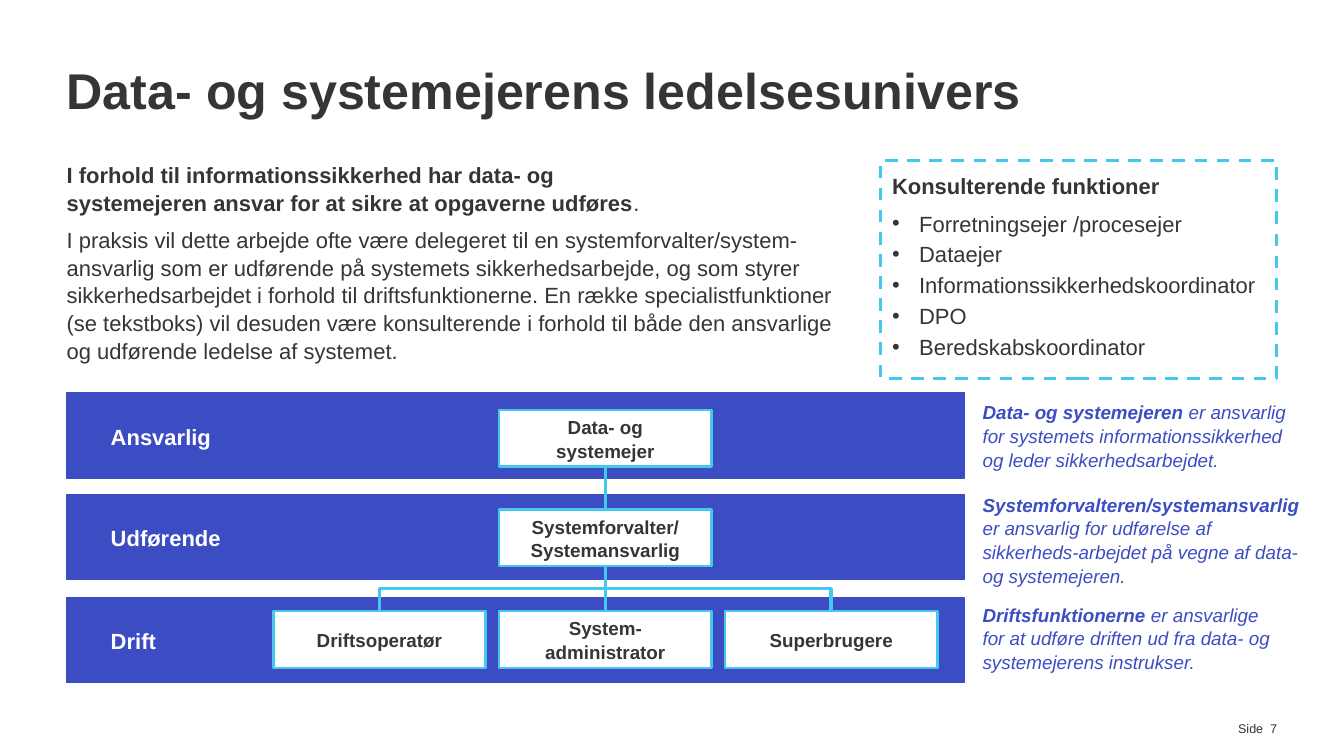
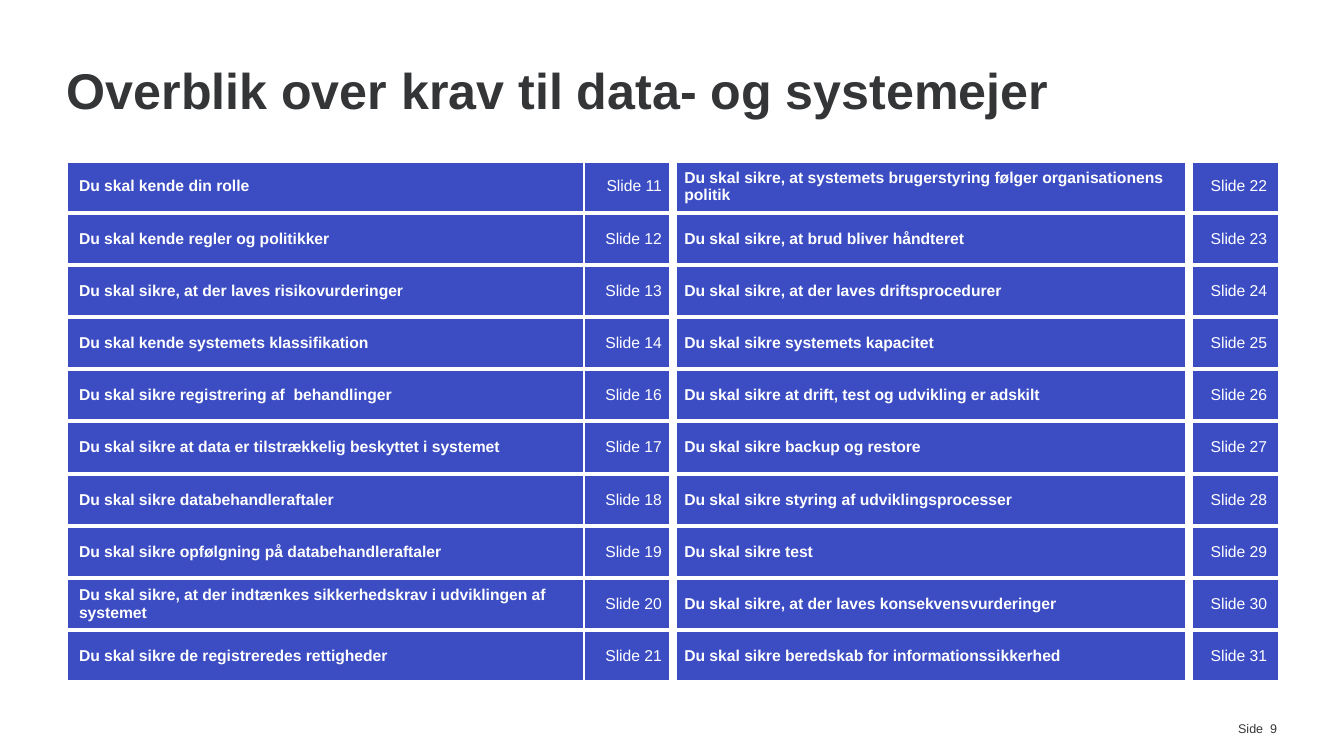
import pptx
import pptx.dml.color
import pptx.enum.dml
import pptx.enum.shapes
import pptx.enum.text
import pptx.oxml.ns
import pptx.util
from lxml import etree

Inches = pptx.util.Inches
Pt = pptx.util.Pt
qn = pptx.oxml.ns.qn
ALIGN = pptx.enum.text.PP_ALIGN
ANCHOR = pptx.enum.text.MSO_ANCHOR
CONNECTOR = pptx.enum.shapes.MSO_CONNECTOR
RECTANGLE = pptx.enum.shapes.MSO_SHAPE.RECTANGLE


class Theme:
    font = "Arial"
    ink, footer_ink = "333537", "343536"
    blue, cyan, white = "3C4DC4", "45C8ED", "FFFFFF"
    title_size, body_size, small_size, cell_size, footer_size = 32, 14, 12, 10, 8
    line_spacing = 1.05
    left, width = 0.59, 10.71


def rgb(value):
    return pptx.dml.color.RGBColor.from_string(value)


class Builder:
    """Holds the style, the deck and the page being drawn."""

    def __init__(self, theme):
        self.theme = theme
        self.deck = pptx.Presentation()
        self.deck.slide_width = Inches(11.9)
        self.deck.slide_height = Inches(6.69)
        self.page = None

    # Page with title and page number
    def new_page(self, title, number):
        theme = self.theme
        self.page = self.deck.slides.add_slide(self.deck.slide_layouts[6])
        title_box = self.text_box(theme.left, 0.55, theme.width, 0.55, ANCHOR.MIDDLE)
        self.set_text(title_box.text_frame.paragraphs[0], title, theme.title_size,
                      theme.ink, bold=True, spacing=0.9)
        number_box = self.text_box(9.81, 6.38, 1.5, 0.14)
        self.set_text(number_box.text_frame.paragraphs[0], f"Side  {number}",
                      theme.footer_size, theme.footer_ink, align=ALIGN.RIGHT, spacing=1)

    # Text
    def set_text(self, para, text, size, color, bold=False, italic=False, tail="",
                 align=None, spacing=None, after=0):
        """Fill a paragraph; the tail follows in regular weight."""
        para.text = text
        para.alignment = align
        para.line_spacing = spacing or self.theme.line_spacing
        para.space_after = Pt(after)
        spans = [(span, bold) for span in para.runs]
        if tail:
            span = para.add_run()
            span.text = tail
            spans.append((span, False))
        for span, weight in spans:
            span.font.name = self.theme.font
            span.font.size = Pt(size)
            span.font.color.rgb = rgb(color)
            span.font.bold = weight
            span.font.italic = italic

    def set_frame(self, box, insets, anchor):
        frame = box.text_frame
        frame.word_wrap = True
        frame.vertical_anchor = anchor
        (frame.margin_left, frame.margin_top,
         frame.margin_right, frame.margin_bottom) = map(Inches, insets)

    def text_box(self, left, top, width, height, anchor=ANCHOR.TOP):
        box = self.page.shapes.add_textbox(*map(Inches, (left, top, width, height)))
        self.set_frame(box, (0, 0, 0, 0), anchor)
        return box

    def bullet(self, para):
        properties = para._p.get_or_add_pPr()
        properties.set("marL", str(Inches(0.24)))
        properties.set("indent", str(Inches(-0.24)))
        etree.SubElement(properties, qn("a:buFont")).set("typeface", self.theme.font)
        etree.SubElement(properties, qn("a:buChar")).set("char", "•")

    # Rectangles
    def rectangle(self, left, top, width, height, fill, line, weight,
                  insets, anchor=ANCHOR.MIDDLE):
        box = self.page.shapes.add_shape(
            RECTANGLE, *map(Inches, (left, top, width, height)))
        box.shadow.inherit = False
        if fill:
            box.fill.solid()
            box.fill.fore_color.rgb = rgb(fill)
        else:
            box.fill.background()
        box.line.color.rgb = rgb(line)
        box.line.width = Pt(weight)
        self.set_frame(box, insets, anchor)
        return box

    def band(self, top, label):
        theme = self.theme
        box = self.rectangle(theme.left, top, 7.95, 0.75, theme.blue, theme.blue, 1,
                             (0.39, 0.2, 0.2, 0.2))
        self.set_text(box.text_frame.paragraphs[0], label, theme.body_size, theme.white,
                      bold=True, align=ALIGN.LEFT)

    def role(self, left, top, label):
        theme = self.theme
        box = self.rectangle(left, top, 1.88, 0.5, theme.white, theme.cyan, 1.5,
                             (0.2, 0.2, 0.2, 0.2))
        self.set_text(box.text_frame.paragraphs[0], label, theme.small_size, theme.ink,
                      bold=True, align=ALIGN.CENTER)
        return box

    def dashed_list(self, left, top, width, height, heading, items):
        theme = self.theme
        box = self.rectangle(left, top, width, height, None, theme.cyan, 2,
                             (0.1, 0.1, 0.1, 0.1), ANCHOR.TOP)
        box.line.dash_style = pptx.enum.dml.MSO_LINE.DASH
        frame = box.text_frame
        self.set_text(frame.paragraphs[0], heading, theme.body_size, theme.ink,
                      bold=True, align=ALIGN.LEFT, after=6)
        for item in items:
            para = frame.add_paragraph()
            self.set_text(para, item, theme.body_size, theme.ink,
                          align=ALIGN.LEFT, after=2)
            self.bullet(para)

    # Connectors
    def connect(self, parent, child):
        """Join the bottom of the parent to the top of the child."""
        start_x, end_x = (box.left + box.width // 2 for box in (parent, child))
        start_y, end_y = parent.top + parent.height, child.top
        kind = CONNECTOR.STRAIGHT if start_x == end_x else CONNECTOR.ELBOW
        line = self.page.shapes.add_connector(kind, start_x, start_y, end_x, end_y)
        line.begin_connect(parent, 2)
        line.end_connect(child, 0)
        line.line.color.rgb = rgb(self.theme.cyan)
        line.line.width = Pt(2.25)
        etree.SubElement(line._element.spPr, qn("a:effectLst"))
        if kind == CONNECTOR.ELBOW:
            # A quarter turn makes the elbow leave downwards
            across, down = abs(end_x - start_x), end_y - start_y
            line.left = (start_x + end_x - down) // 2
            line.top = (start_y + end_y - across) // 2
            line.width, line.height = down, across
            frame = line._element.spPr.find(qn("a:xfrm"))
            frame.set("rot", "5400000")
            frame.set("flipH", "0")
            frame.set("flipV", "1" if end_x > start_x else "0")

    # Table
    def border(self, cell, side, weight):
        line = etree.SubElement(cell._tc.get_or_add_tcPr(), qn(f"a:ln{side}"))
        line.set("w", str(Pt(weight)))
        fill = etree.SubElement(line, qn("a:solidFill"))
        etree.SubElement(fill, qn("a:srgbClr")).set("val", self.theme.white)

    def table(self, left, top, widths, row_height, rows):
        theme = self.theme
        frame = self.page.shapes.add_table(
            len(rows), len(widths), Inches(left), Inches(top),
            Inches(sum(widths)), Inches(row_height * len(rows)))
        table = frame.table
        table.first_row = table.horz_banding = False
        for column, width in zip(table.columns, widths):
            column.width = Inches(width)
        for row, texts in zip(table.rows, rows):
            row.height = Inches(row_height)
            for index, (cell, text) in enumerate(zip(row.cells, texts)):
                is_link = index % 2 == 1
                cell.vertical_anchor = ANCHOR.MIDDLE
                self.set_text(cell.text_frame.paragraphs[0], text, theme.cell_size,
                              theme.white, bold=not is_link, spacing=1,
                              align=ALIGN.RIGHT if is_link else ALIGN.LEFT)
                # A wide gap between the halves, thin gaps between rows
                if index == 2:
                    self.border(cell, "L", 6)
                if index == 1:
                    self.border(cell, "R", 6)
                self.border(cell, "T", 3)
                self.border(cell, "B", 3)
                cell.fill.solid()
                cell.fill.fore_color.rgb = rgb(theme.blue)


INTRO = ("I forhold til informationssikkerhed har data- og\n"
         "systemejeren ansvar for at sikre at opgaverne udføres")
PRACTICE = (
    "I praksis vil dette arbejde ofte være delegeret til en systemforvalter/system-"
    "ansvarlig som er udførende på systemets sikkerhedsarbejde, og som styrer "
    "sikkerhedsarbejdet i forhold til driftsfunktionerne. En række "
    "specialistfunktioner (se tekstboks) vil desuden være konsulterende i forhold "
    "til både den ansvarlige og udførende ledelse af systemet.")
CONSULTED = ["Forretningsejer /procesejer", "Dataejer",
             "Informationssikkerhedskoordinator", "DPO", "Beredskabskoordinator"]
BANDS = [(3.48, "Ansvarlig"), (4.38, "Udførende"), (5.29, "Drift")]
NOTES = [
    (3.55, 2.75, 0.61, "Data- og systemejeren ",
     "er ansvarlig for systemets informationssikkerhed og leder sikkerhedsarbejdet."),
    (4.37, 2.91, 0.81, "Systemforvalteren/systemansvarlig ",
     "er ansvarlig for udførelse af sikkerheds-arbejdet på vegne af data- og "
     "systemejeren."),
    (5.34, 2.62, 0.61, "Driftsfunktionerne ",
     "er ansvarlige for at udføre driften ud fra data- og systemejerens instrukser."),
]
LEFT_DEMANDS = [
    ("Du skal kende din rolle", 11),
    ("Du skal kende regler og politikker", 12),
    ("Du skal sikre, at der laves risikovurderinger", 13),
    ("Du skal kende systemets klassifikation", 14),
    ("Du skal sikre registrering af  behandlinger", 16),
    ("Du skal sikre at data er tilstrækkelig beskyttet i systemet", 17),
    ("Du skal sikre databehandleraftaler", 18),
    ("Du skal sikre opfølgning på databehandleraftaler", 19),
    ("Du skal sikre, at der indtænkes sikkerhedskrav i udviklingen af systemet", 20),
    ("Du skal sikre de registreredes rettigheder", 21),
]
RIGHT_DEMANDS = [
    ("Du skal sikre, at systemets brugerstyring følger organisationens politik", 22),
    ("Du skal sikre, at brud bliver håndteret", 23),
    ("Du skal sikre, at der laves driftsprocedurer", 24),
    ("Du skal sikre systemets kapacitet", 25),
    ("Du skal sikre at drift, test og udvikling er adskilt", 26),
    ("Du skal sikre backup og restore", 27),
    ("Du skal sikre styring af udviklingsprocesser", 28),
    ("Du skal sikre test", 29),
    ("Du skal sikre, at der laves konsekvensvurderinger", 30),
    ("Du skal sikre beredskab for informationssikkerhed", 31),
]


def build_universe(builder):
    theme = builder.theme
    builder.new_page("Data- og systemejerens ledelsesunivers", 7)

    # Introduction and consulted functions
    frame = builder.text_box(theme.left, 1.42, 6.93, 1.96).text_frame
    builder.set_text(frame.paragraphs[0], INTRO, theme.body_size, theme.ink,
                     bold=True, tail=".", after=6)
    builder.set_text(frame.add_paragraph(), PRACTICE, theme.body_size, theme.ink,
                     after=6)
    builder.dashed_list(7.8, 1.42, 3.5, 1.93, "Konsulterende funktioner", CONSULTED)

    # Levels and roles
    for top, label in BANDS:
        builder.band(top, label)
    owner = builder.role(4.42, 3.63, "Data- og systemejer")
    manager = builder.role(4.42, 4.51, "Systemforvalter/\nSystemansvarlig")
    operations = [
        builder.role(2.42 + 2 * index, 5.41, label) for index, label in
        enumerate(["Driftsoperatør", "System-administrator", "Superbrugere"])]
    builder.connect(owner, manager)
    for box in operations:
        builder.connect(manager, box)

    # Explanations beside the levels
    for top, width, height, lead, rest in NOTES:
        box = builder.text_box(8.7, top, width, height, ANCHOR.MIDDLE)
        builder.set_text(box.text_frame.paragraphs[0], lead, theme.small_size,
                         theme.blue, bold=True, italic=True, tail=rest)


def build_overview(builder):
    builder.new_page("Overblik over krav til data- og systemejer", 9)
    rows = [(left, f"Slide {left_number}", right, f"Slide {right_number}")
            for (left, left_number), (right, right_number)
            in zip(LEFT_DEMANDS, RIGHT_DEMANDS)]
    builder.table(0.6, 1.42, [4.57, 0.79, 4.57, 0.79], 4.62 / len(rows), rows)


def main():
    builder = Builder(Theme)
    build_universe(builder)
    build_overview(builder)
    builder.deck.save("out.pptx")


if __name__ == "__main__":
    main()
